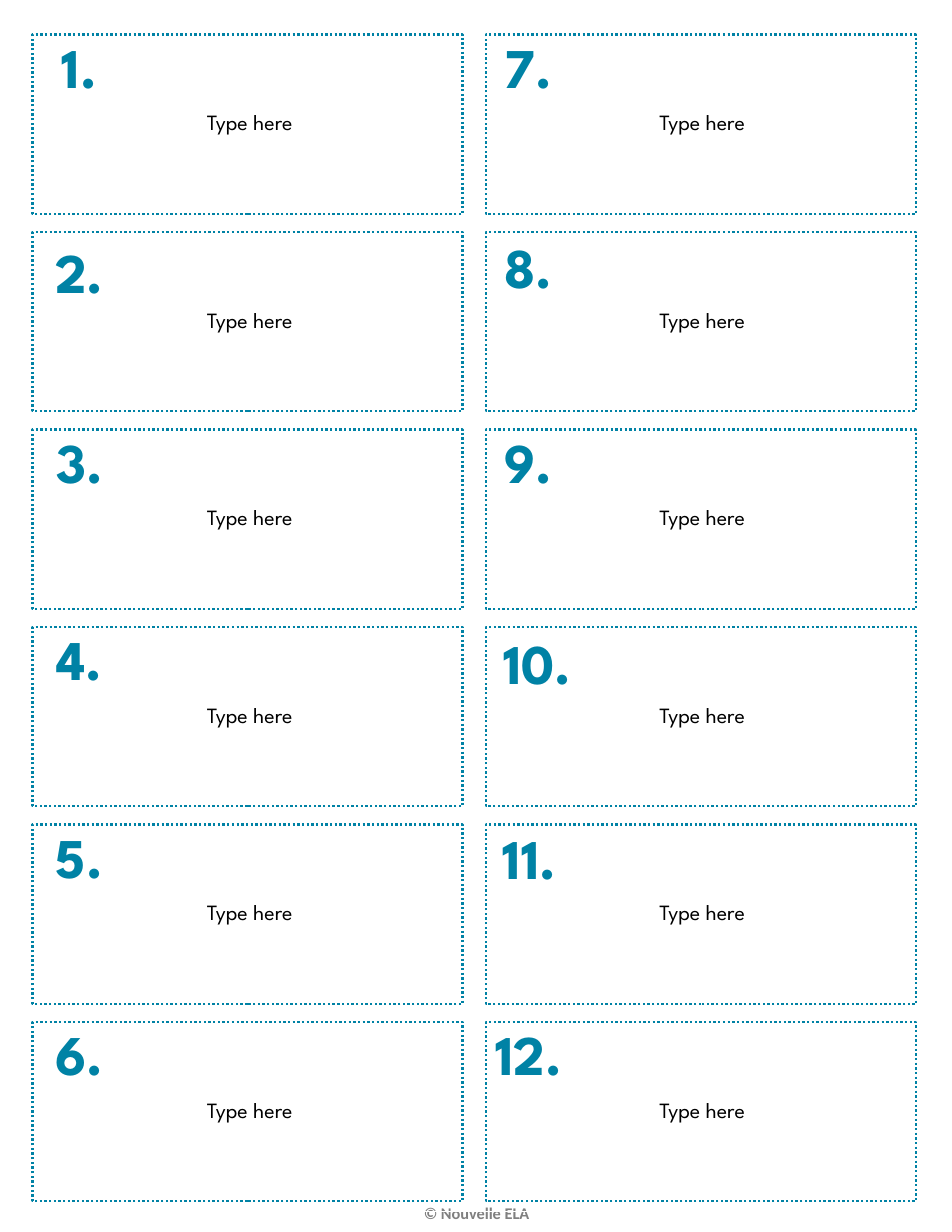
from dataclasses import dataclass

from pptx import Presentation
from pptx.dml.color import RGBColor
from pptx.enum.dml import MSO_LINE
from pptx.enum.shapes import MSO_SHAPE
from pptx.enum.text import MSO_ANCHOR, PP_ALIGN
from pptx.util import Inches, Pt

RECT = MSO_SHAPE.RECTANGLE
DOTS = MSO_LINE.ROUND_DOT  # stored as sysDot
MIDDLE = MSO_ANCHOR.MIDDLE
CENTER = PP_ALIGN.CENTER

WIDTH, HEIGHT = 8.5, 11
ROWS, COLS = 6, 2
LEFT, TOP = 0.21, 0.24
COL, ROW = 4.04, 10.58 / ROWS

# Small shifts of single numbers from their grid place, in inches
NUDGE = {2: (0, 0.07), 8: (0, 0.02), 10: (0.08, 0.03), 11: (0.01, 0.01)}


@dataclass(frozen=True)
class Theme:
    teal: RGBColor = RGBColor(0x00, 0x82, 0xA5)
    black: RGBColor = RGBColor(0x00, 0x00, 0x00)
    gray: RGBColor = RGBColor(0x80, 0x80, 0x80)
    face: str = "League Spartan"
    plain: str = "Calibri"
    number: float = 36
    body: float = 14
    credit: float = 10.5


THEME = Theme()


def style(para, face, size, color, bold=False):
    para.alignment = CENTER
    font = para.font
    font.name, font.size, font.bold = face, Pt(size), bold
    font.color.rgb = color


def add_label(slide, box, text, *look):
    frame = slide.shapes.add_textbox(*map(Inches, box)).text_frame
    frame.word_wrap = True
    frame.text = text
    style(frame.paragraphs[0], *look)


def add_grid(slide):
    shape = slide.shapes.add_table(
        ROWS, COLS, Inches(LEFT), Inches(TOP),
        Inches(COLS * COL), Inches(ROWS * ROW))
    table = shape.table
    table.first_row = table.horz_banding = False
    for cell in table.iter_cells():
        cell.fill.background()
        cell.vertical_anchor = MIDDLE
        cell.text = "Type here"
        style(cell.text_frame.paragraphs[0],
              THEME.face, THEME.body, THEME.black)


def add_number(slide, col, row):
    number = col * ROWS + row + 1
    dx, dy = NUDGE.get(number, (0, 0))
    box = (0.1 + col * 4.01 + dx, TOP + row * ROW + dy, 1.22, 0.71)
    add_label(slide, box, f"{number}.",
              THEME.face, THEME.number, THEME.teal, True)


def add_frame(slide, col, row):
    box = (LEFT + 0.08 + col * 4.05, TOP + 0.07 + row * ROW, 3.84, 1.6)
    frame = slide.shapes.add_shape(RECT, *map(Inches, box))
    frame.shadow.inherit = False
    frame.fill.background()
    frame.line.color.rgb = THEME.teal
    frame.line.width = Pt(1.5)
    frame.line.dash_style = DOTS


def main():
    deck = Presentation()
    deck.slide_width, deck.slide_height = Inches(WIDTH), Inches(HEIGHT)
    slide = deck.slides.add_slide(deck.slide_layouts[6])
    add_label(slide, (2.97, 10.69, 2.57, 0.29), "© Nouvelle ELA",
              THEME.plain, THEME.credit, THEME.gray, True)
    add_grid(slide)
    for add in (add_number, add_frame):
        for col in range(COLS):
            for row in range(ROWS):
                add(slide, col, row)
    deck.save("out.pptx")


if __name__ == "__main__":
    main()
